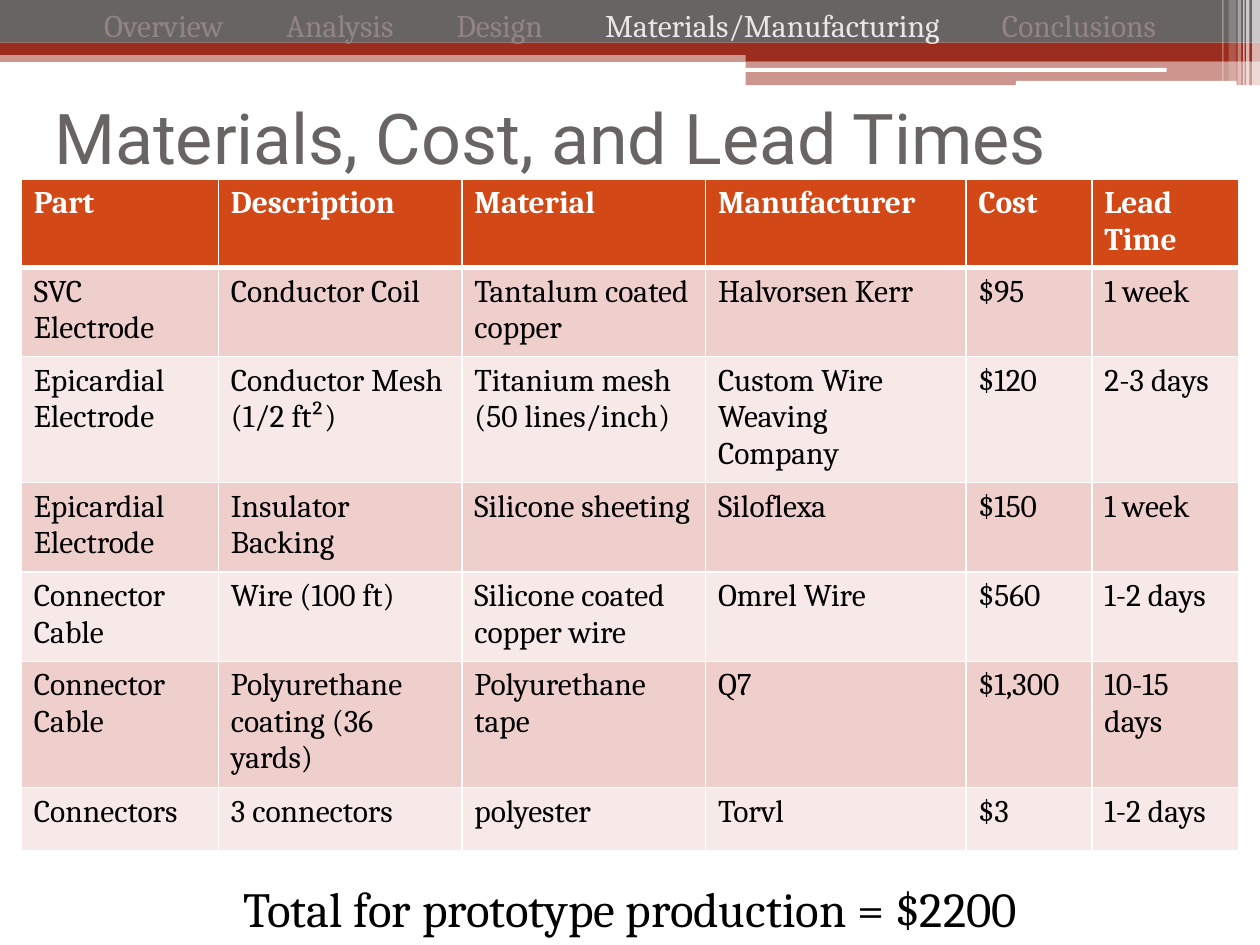
from lxml import etree
from pptx import Presentation
from pptx.dml.color import RGBColor
from pptx.enum.shapes import MSO_SHAPE
from pptx.enum.text import MSO_ANCHOR, PP_ALIGN
from pptx.oxml.ns import qn
from pptx.util import Cm, Pt

RECT, ROUND = MSO_SHAPE.RECTANGLE, MSO_SHAPE.ROUNDED_RECTANGLE
MIDDLE, LEFT, CENTER = MSO_ANCHOR.MIDDLE, PP_ALIGN.LEFT, PP_ALIGN.CENTER
RED, GRAY, WHITE, BLACK = "9B2D1F", "696464", "FFFFFF", "000000"
HEADER, BANDS = "D34817", ("EFCFCC", "F7E9E8")
NAV_OFF, NAV_ON = "918485", "E9E6E7"

TITLE = "Materials, Cost, and Lead Times"
TOTAL = "Total for prototype production = $2200"

# section name and left edge in cm
NAV = [("Overview", 2.1), ("Analysis", 5.77), ("Design", 9.2),
       ("Materials/Manufacturing", 12.2), ("Conclusions", 20.2)]
CURRENT = "Materials/Manufacturing"

ROWS = [
    ("Part", "Description", "Material", "Manufacturer", "Cost", "Lead Time"),
    ("SVC Electrode", "Conductor Coil", "Tantalum coated copper",
     "Halvorsen Kerr", "$95", "1 week"),
    ("Epicardial Electrode", "Conductor Mesh (1/2 ft²)",
     "Titanium mesh (50 lines/inch)", "Custom Wire Weaving Company",
     "$120", "2-3 days"),
    ("Epicardial Electrode", "Insulator Backing", "Silicone sheeting",
     "Siloflexa", "$150", "1 week"),
    ("Connector Cable", "Wire (100 ft)", "Silicone coated copper wire",
     "Omrel Wire", "$560", "1-2 days"),
    ("Connector Cable", "Polyurethane coating (36 yards)",
     "Polyurethane tape", "Q7", "$1,300", "10-15 days"),
    ("Connectors", "3 connectors", "polyester", "Torvl", "$3", "1-2 days"),
]
COL_WIDTHS = (3.97, 4.91, 4.91, 5.25, 2.54, 2.96)
ROW_HEIGHTS = (1.78, 1.8, 2.54, 1.8, 1.8, 2.46, 1.27)

# shape, left, top, width, height in cm, colour, opacity in percent
BANNER = [
    (RECT, 0, 1.02, 25.4, 0.23, RED, 50),
    (RECT, 0, 0, 25.4, 0.86, GRAY, 100),
    (RECT, 0, 0.86, 25.4, 0.25, RED, 100),
    (RECT, 15.03, 0.99, 10.37, 0.24, RED, 100),
    (RECT, 15.03, 1.23, 10.37, 0.49, RED, 50),
    (ROUND, 15.01, 1.37, 8.51, 0.08, WHITE, 100),
    (ROUND, 20.48, 1.63, 4.45, 0.1, WHITE, 100),
]
# left, width, height in cm, opacity
STRIPES = [(25.24, 0.16, 1.73, 65), (25.12, 0.07, 1.73, 65),
           (25.06, 0.03, 1.73, 60), (24.95, 0.07, 1.73, 40),
           (24.77, 0.15, 1.63, 20), (24.64, 0.03, 1.63, 30)]


def rgb(color):
    return RGBColor.from_string(color)


def add_bar(s, kind, left, top, width, height, color, opacity):
    sp = s.shapes.add_shape(kind, Cm(left), Cm(top), Cm(width), Cm(height))
    sp.shadow.inherit = False
    sp.line.fill.background()
    sp.fill.solid()
    sp.fill.fore_color.rgb = rgb(color)
    if opacity < 100:
        clr = sp._element.spPr.find(".//" + qn("a:srgbClr"))
        etree.SubElement(clr, qn("a:alpha"), val=str(opacity * 1000))


def style(p, font, size, color, bold=False):
    for r in p.runs:
        r.font.name, r.font.size, r.font.bold = font, Pt(size), bold
        r.font.color.rgb = rgb(color)


def add_text(s, text, left, top, width, height, font, size, color, align):
    sp = s.shapes.add_textbox(Cm(left), Cm(top), Cm(width), Cm(height))
    tf = sp.text_frame
    tf.word_wrap = True
    tf.text = text
    p = tf.paragraphs[0]
    p.alignment = align
    style(p, font, size, color)
    return tf


def add_nav(s):
    tf = add_text(s, "", 0, 0, 25.4, 1.02, "Cambria", 18, NAV_OFF, LEFT)
    start = NAV[0][1]
    tf.margin_left = Cm(start)
    p = tf.paragraphs[0]
    tabs = etree.SubElement(p._p.get_or_add_pPr(), qn("a:tabLst"))
    for i, (name, left) in enumerate(NAV):
        r = p.add_run()
        r.text = "\t" + name if i else name
        if i:
            etree.SubElement(tabs, qn("a:tab"), pos=str(Cm(left - start)), algn="l")
    style(p, "Cambria", 18, NAV_OFF)
    for r in p.runs:
        if r.text.strip() == CURRENT:
            r.font.color.rgb = rgb(NAV_ON)


def set_borders(cell, widths):
    """Draw white borders; widths are points for left, right, top, bottom."""
    tcPr = cell._tc.get_or_add_tcPr()
    for side, width in zip("LRTB", widths):
        ln = etree.SubElement(tcPr, qn("a:ln" + side), w=str(Pt(width)))
        fill = etree.SubElement(ln, qn("a:solidFill"))
        etree.SubElement(fill, qn("a:srgbClr"), val=WHITE)


def add_parts_table(s):
    table = s.shapes.add_table(
        len(ROWS), len(COL_WIDTHS), Cm(0.43), Cm(3.61),
        Cm(sum(COL_WIDTHS)), Cm(sum(ROW_HEIGHTS))).table
    for col, width in zip(table.columns, COL_WIDTHS):
        col.width = Cm(width)
    for i, (texts, height) in enumerate(zip(ROWS, ROW_HEIGHTS)):
        table.rows[i].height = Cm(height)
        head = i == 0
        for j, text in enumerate(texts):
            cell = table.cell(i, j)
            cell.text = text
            style(cell.text_frame.paragraphs[0], "Cambria", 18,
                  WHITE if head else BLACK, head)
            set_borders(cell, (1, 1, 3 if i == 1 else 1, 3 if head else 1))
            cell.fill.solid()
            cell.fill.fore_color.rgb = rgb(HEADER if head else BANDS[(i - 1) % 2])


def main():
    prs = Presentation()
    prs.slide_width, prs.slide_height = Cm(25.4), Cm(19.05)
    s = prs.slides.add_slide(prs.slide_layouts[6])
    for bar in BANNER:
        add_bar(s, *bar)
    for left, width, height, opacity in STRIPES:
        add_bar(s, RECT, left, 0, width, height, WHITE, opacity)
    title = add_text(s, TITLE, 0.84, 1.27, 22.86, 2.97, "Roboto", 40, GRAY, LEFT)
    title.vertical_anchor = MIDDLE
    add_parts_table(s)
    add_nav(s)
    add_text(s, TOTAL, 0, 17.58, 25.4, 1.45, "Cambria", 28, BLACK, CENTER)
    prs.save("out.pptx")


if __name__ == "__main__":
    main()
